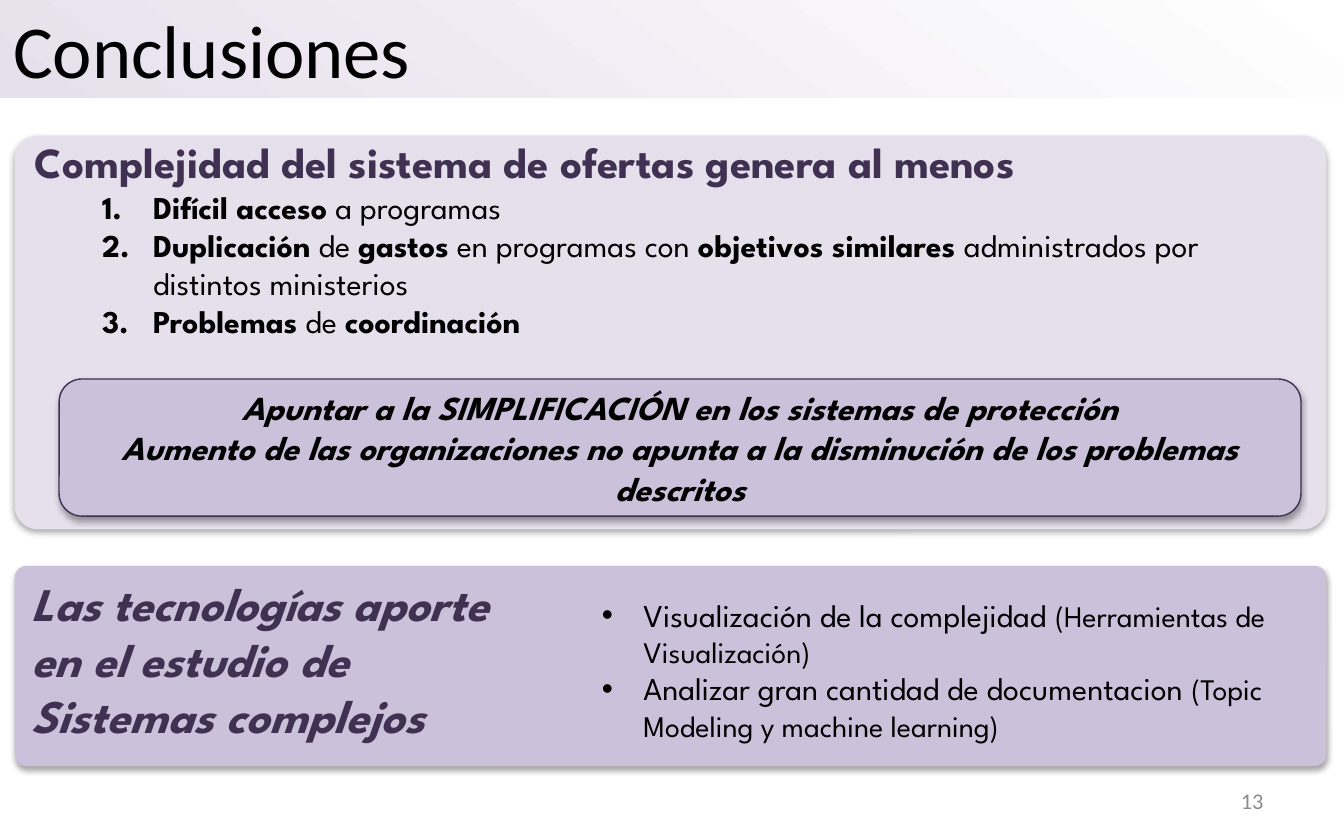
from lxml import etree
from pptx import Presentation, util as u
from pptx.dml.color import RGBColor
from pptx.enum import shapes, text
from pptx.oxml.ns import qn

PX = 9144  # EMU per px, 100 px to the inch
BODY, PLAIN = "League Spartan", "Calibri"
BLACK, GREY, PURPLE = "000000", "8C8C8C", "403152"
PALE, LILAC, WHITE = "E6E0EC", "CCC1DA", "FFFFFF"

# Content: a paragraph is a list of (text, size, bold, italic, colour) runs
TITLE = [[("Conclusiones", 40, False, False, BLACK)]]
PAGE_NUMBER = [[("13", 12, False, False, GREY)]]
HEADING = [("Complejidad del sistema de ofertas genera al menos", 23, True, False, PURPLE)]
PROBLEMS = [
    [("Difícil acceso", True), (" a programas", False)],
    [("Duplicación", True), (" de ", False), ("gastos", True),
     (" en programas con ", False), ("objetivos similares ", True),
     ("administrados por distintos ministerios", False)],
    [("Problemas", True), (" de ", False), ("coordinación", True)],
]
CALL_TO_ACTION = [
    "Apuntar a la SIMPLIFICACIÓN en los sistemas de protección",
    "Aumento de las organizaciones no apunta a la disminución de los problemas descritos",
]
TECHNOLOGY = ["Las tecnologías aporte", "en el estudio de", "Sistemas complejos"]
TOOLS = [
    ("Visualización de la complejidad ", "(Herramientas de Visualización)"),
    ("Analizar gran cantidad de documentacion ", "(Topic Modeling y machine learning)"),
]

# Layout in px: left, top, width, height
PANEL_LEFT, PANEL_WIDTH = 11, 976
TITLE_BOX = (0, 0, 1000, 73)
PROBLEM_BOX = (PANEL_LEFT, 101, PANEL_WIDTH, 293)
CALL_BOX = (44, 282, 924, 102)
TECHNOLOGY_BOX = (PANEL_LEFT, 421, PANEL_WIDTH, 149)
TOOLS_BOX = (438, 438, 550, 121)
NUMBER_BOX = (717, 579, 233, 33)


def color(value):
    return RGBColor.from_string(value)


def box(px):
    return [length * PX for length in px]


def add_panel(px, fill, corner=None, line=None):
    """Rounded rectangle with a soft shadow below it."""
    shape = slide.shapes.add_shape(shapes.MSO_SHAPE.ROUNDED_RECTANGLE, *box(px))
    if corner is not None:
        shape.adjustments[0] = corner
    shape.fill.solid()
    shape.fill.fore_color.rgb = color(fill)
    if line:
        shape.line.color.rgb = color(line)
        shape.line.width = u.Pt(0.75)
    else:
        shape.line.fill.background()
    shape.shadow.inherit = False
    effects = shape._element.spPr.find(qn("a:effectLst"))
    shadow = etree.SubElement(effects, qn("a:outerShdw"), blurRad="40000",
                              dist="23000", dir="5400000", rotWithShape="0")
    tone = etree.SubElement(shadow, qn("a:srgbClr"), val=BLACK)
    etree.SubElement(tone, qn("a:alpha"), val="35000")
    return shape


def write(shape, paragraphs, font=BODY, align=text.PP_ALIGN.LEFT,
          anchor=text.MSO_ANCHOR.MIDDLE):
    frame = shape.text_frame
    frame.word_wrap = True
    frame.vertical_anchor = anchor
    for index, runs in enumerate(paragraphs):
        paragraph = frame.add_paragraph() if index else frame.paragraphs[0]
        paragraph.alignment = align
        for words, size, bold, italic, tone in runs:
            run = paragraph.add_run()
            run.text = words
            run.font.name = font
            run.font.size = u.Pt(size)
            run.font.bold, run.font.italic = bold, italic
            run.font.color.rgb = color(tone)
    return frame


def add_bullet(paragraph, margin, hanging, tag, **attributes):
    properties = paragraph._p.get_or_add_pPr()
    properties.set("marL", str(margin * PX))
    properties.set("indent", str(-hanging * PX))
    etree.SubElement(properties, qn("a:buFont"), typeface="Arial" if tag == "a:buChar" else BODY)
    etree.SubElement(properties, qn(tag), **attributes)


presentation = Presentation()
presentation.slide_width, presentation.slide_height = 1000 * PX, 625 * PX
slide = presentation.slides.add_slide(presentation.slide_layouts[6])

# Title band
band = slide.shapes.add_shape(shapes.MSO_SHAPE.RECTANGLE, *box(TITLE_BOX))
band.shadow.inherit = False
band.line.fill.background()
band.fill.gradient()
band.fill.gradient_angle = 55
for stop, tone in zip(band.fill.gradient_stops, (PALE, WHITE)):
    stop.color.rgb = color(tone)
write(band, TITLE, PLAIN)

# Page number
write(slide.shapes.add_textbox(*box(NUMBER_BOX)), PAGE_NUMBER, PLAIN, text.PP_ALIGN.RIGHT)

# Problems panel: heading and numbered list
problems = [[(words, 17, bold, False, BLACK) for words, bold in runs] for runs in PROBLEMS]
frame = write(add_panel(PROBLEM_BOX, PALE, 0.06), [HEADING] + problems,
              anchor=text.MSO_ANCHOR.TOP)
frame.margin_top = 0
frame.paragraphs[0].line_spacing = u.Pt(24)
for paragraph in frame.paragraphs[1:]:
    add_bullet(paragraph, 88, 38, "a:buAutoNum", type="arabicPeriod")

# Technology panel with its bulleted tools
frame = write(add_panel(TECHNOLOGY_BOX, LILAC, 0.06),
              [[(line, 25, True, True, PURPLE)] for line in TECHNOLOGY])
frame.margin_bottom = 15 * PX
tools = [[(name, 17, False, False, BLACK), (detail, 16, False, False, BLACK)]
         for name, detail in TOOLS]
frame = write(slide.shapes.add_textbox(*box(TOOLS_BOX)), tools, anchor=text.MSO_ANCHOR.TOP)
for paragraph in frame.paragraphs:
    add_bullet(paragraph, 31, 31, "a:buChar", char="•")

# Call to action
write(add_panel(CALL_BOX, LILAC, line=PURPLE),
      [[(line, 18, True, True, BLACK)] for line in CALL_TO_ACTION],
      align=text.PP_ALIGN.CENTER)

presentation.save("out.pptx")
